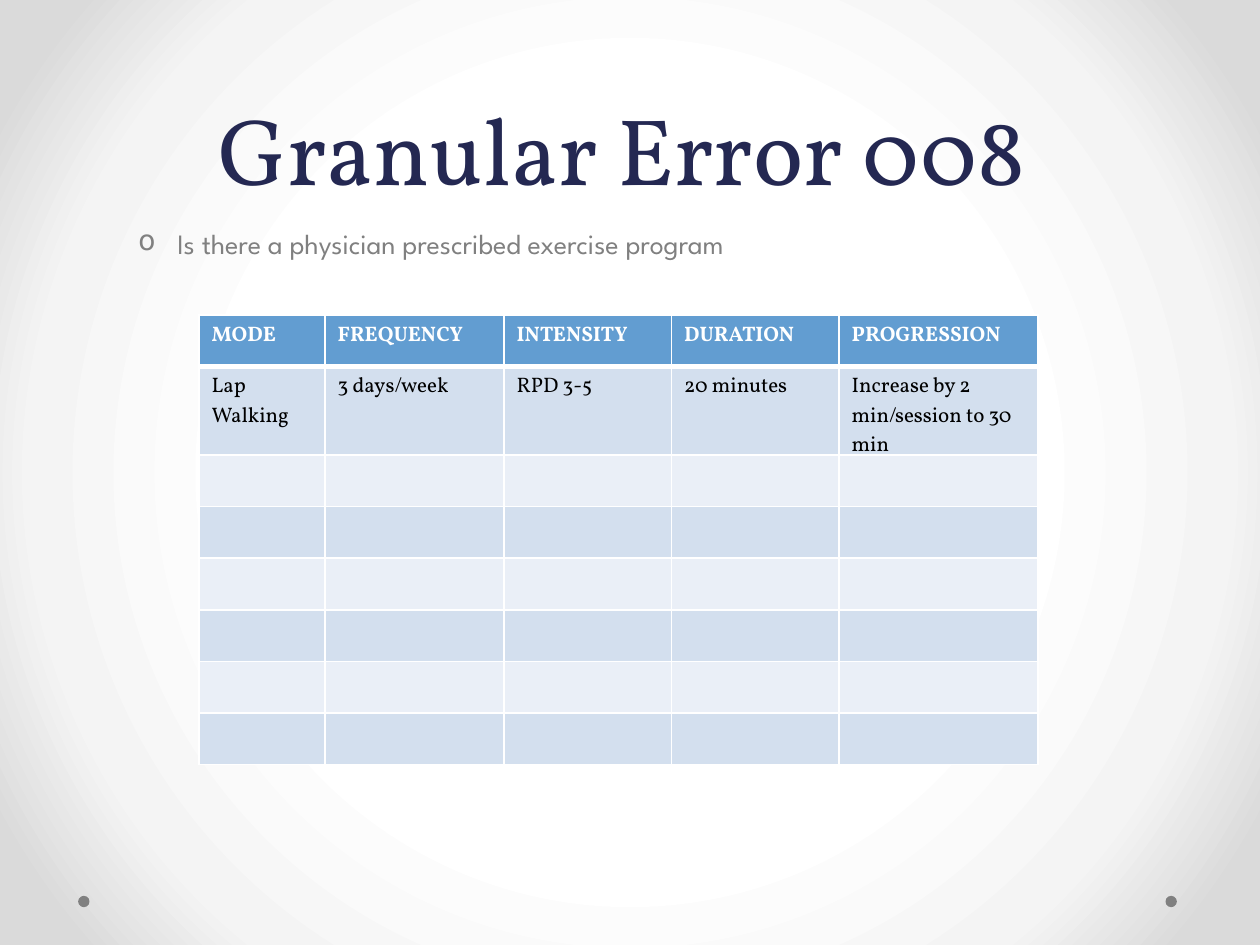
import pptx
import pptx.dml.color
import pptx.enum.shapes
import pptx.enum.text
import pptx.oxml
import pptx.oxml.ns
import pptx.util
from lxml import etree
from pptx.util import Inches

COLORS = {
    "title": "242852",
    "grey": "808080",
    "header": "629DD1",
    "band_dark": "D3DFEE",
    "band_light": "EAEFF7",
    "white": "FFFFFF",
    "black": "000000",
}
BACKDROP_STOPS = [(50, "FFFFFF"), (76, "F4F4F4"), (92, "DADADA")]
HEADING_FONT = "Vollkorn"
BODY_FONT = "League Spartan"

COLUMN_WIDTHS = [1, 1.42, 1.33, 1.33, 1.58]
ROW_HEIGHT = 0.41
ROW_COUNT = 8
PROGRAM = [
    ["MODE", "FREQUENCY", "INTENSITY", "DURATION", "PROGRESSION"],
    ["Lap Walking", "3 days/week", "RPD 3-5", "20 minutes",
     "Increase by 2 min/session to 30 min"],
]


def rgb(name):
    return pptx.dml.color.RGBColor.from_string(COLORS[name])


def style_font(font, name, size, color, bold=False):
    font.name = name
    font.size = pptx.util.Pt(size)
    font.color.rgb = rgb(color)
    font.bold = bold


def paint_backdrop(page):
    """Fill the background with a gradient that runs out from the centre."""
    stops = "".join(
        f'<a:gs pos="{position * 1000}"><a:srgbClr val="{color}"/></a:gs>'
        for position, color in BACKDROP_STOPS
    )
    backdrop = pptx.oxml.parse_xml(
        f'<p:bg {pptx.oxml.ns.nsdecls("p", "a")}><p:bgPr>'
        f'<a:gradFill rotWithShape="1"><a:gsLst>{stops}</a:gsLst>'
        '<a:path path="circle">'
        '<a:fillToRect l="50000" t="50000" r="50000" b="50000"/></a:path>'
        '</a:gradFill><a:effectLst/></p:bgPr></p:bg>'
    )
    page.element.cSld.insert(0, backdrop)


def add_corner_dots(page, lefts, top, size):
    for left in lefts:
        dot = page.shapes.add_shape(
            pptx.enum.shapes.MSO_SHAPE.OVAL,
            Inches(left), Inches(top), Inches(size), Inches(size),
        )
        dot.shadow.inherit = False
        dot.fill.solid()
        dot.fill.fore_color.rgb = rgb("grey")
        dot.line.fill.background()


def place_title(page, left, top, width, height):
    title = page.shapes.title
    title.left, title.top = Inches(left), Inches(top)
    title.width, title.height = Inches(width), Inches(height)
    frame = title.text_frame
    frame.text = "Granular Error 008"
    frame.word_wrap = True
    frame.auto_size = pptx.enum.text.MSO_AUTO_SIZE.NONE
    frame.vertical_anchor = pptx.enum.text.MSO_ANCHOR.BOTTOM
    para = frame.paragraphs[0]
    para.alignment = pptx.enum.text.PP_ALIGN.CENTER
    para.line_spacing = pptx.util.Pt(58)
    style_font(para.font, HEADING_FONT, 54, "title")


def add_question(page, left, top, width, height):
    box = page.shapes.add_textbox(
        Inches(left), Inches(top), Inches(width), Inches(height)
    )
    box.text_frame.word_wrap = True
    para = box.text_frame.paragraphs[0]
    para.text = "Is there a physician prescribed exercise program"
    para.space_before = pptx.util.Pt(3.2)
    style_font(para.font, BODY_FONT, 16, "grey")
    properties = para._p.get_or_add_pPr()
    properties.set("marL", str(Inches(0.81)))
    properties.set("indent", str(Inches(-0.31)))
    bullet = pptx.oxml.parse_xml(
        f'<a:buChar {pptx.oxml.ns.nsdecls("a")} char="o"/>'
    )
    properties.insert_element_before(bullet, "a:tabLst", "a:defRPr", "a:extLst")


def draw_borders(cell, top, bottom):
    """Rule the cell in white: 1 pt sides, the given points above and below."""
    properties = cell._tc.get_or_add_tcPr()
    for side, points in (("L", 1), ("R", 1), ("T", top), ("B", bottom)):
        line = etree.SubElement(
            properties, pptx.oxml.ns.qn(f"a:ln{side}"), w=str(pptx.util.Pt(points))
        )
        fill = etree.SubElement(line, pptx.oxml.ns.qn("a:solidFill"))
        etree.SubElement(
            fill, pptx.oxml.ns.qn("a:srgbClr"), val=COLORS["white"]
        )


def add_program_table(page, left, top):
    table = page.shapes.add_table(
        ROW_COUNT, len(COLUMN_WIDTHS), Inches(left), Inches(top),
        Inches(sum(COLUMN_WIDTHS)), Inches(ROW_HEIGHT * ROW_COUNT),
    ).table
    for column, width in zip(table.columns, COLUMN_WIDTHS):
        column.width = Inches(width)
    for index, row in enumerate(table.rows):
        row.height = Inches(ROW_HEIGHT)
        is_header = index == 0
        band = "band_dark" if index % 2 else "band_light"
        words = PROGRAM[index] if index < len(PROGRAM) else [""] * len(COLUMN_WIDTHS)
        for cell, text in zip(row.cells, words):
            cell.text = text
            style_font(
                cell.text_frame.paragraphs[0].font, HEADING_FONT, 12,
                "white" if is_header else "black", is_header,
            )
            draw_borders(cell, 3 if index == 1 else 1, 3 if is_header else 1)
            cell.fill.solid()
            cell.fill.fore_color.rgb = rgb("header" if is_header else band)


def main():
    deck = pptx.Presentation()
    deck.slide_width, deck.slide_height = Inches(10), Inches(7.5)
    page = deck.slides.add_slide(deck.slide_layouts.get_by_name("Title Only"))
    paint_backdrop(page)
    add_corner_dots(page, lefts=(9.25, 0.62), top=7.11, size=0.09)
    place_title(page, 0.33, 1, 9.21, 0.67)
    add_question(page, 0.5, 1.75, 9, 4.95)
    add_program_table(page, 1.58, 2.5)
    deck.save("out.pptx")


if __name__ == "__main__":
    main()
